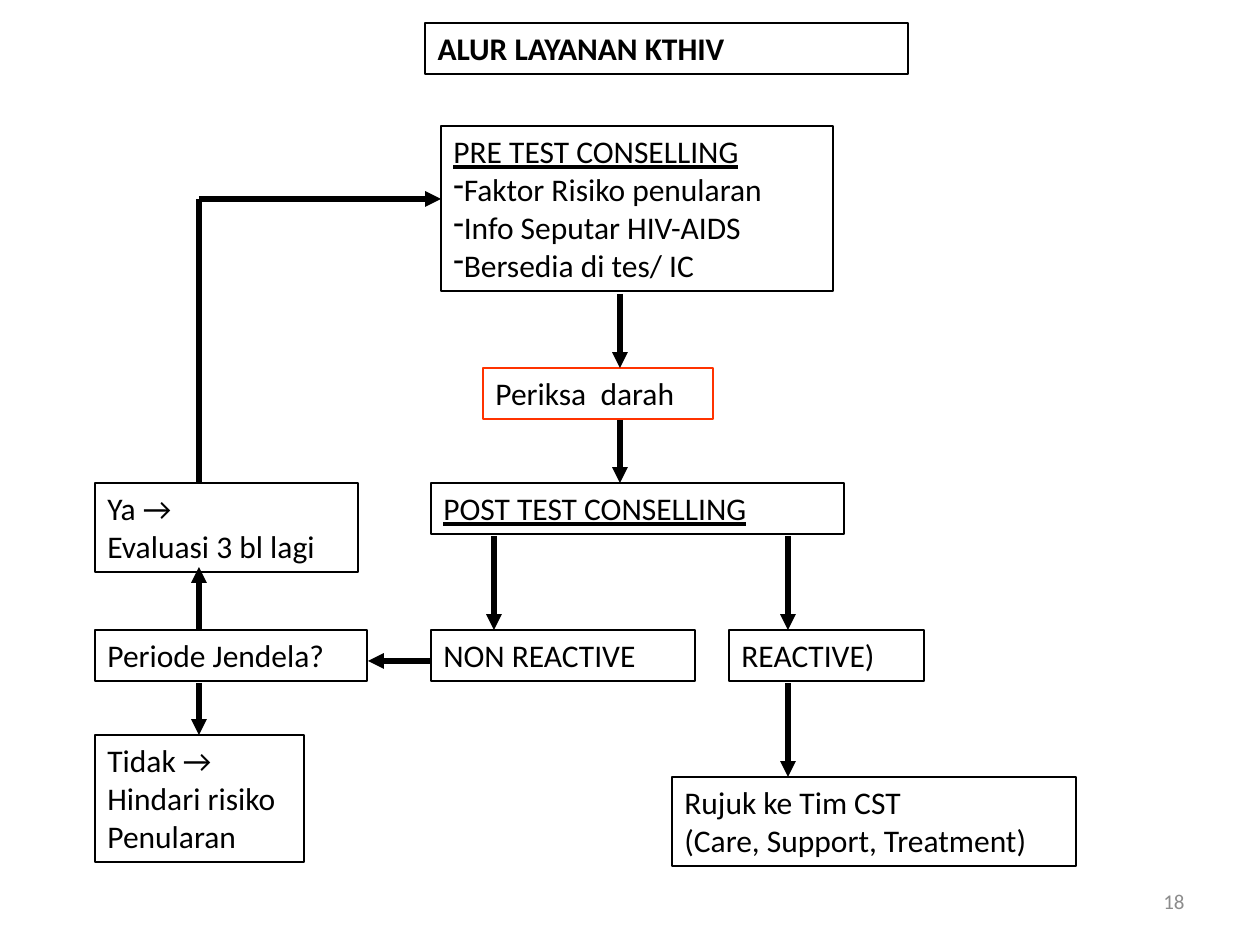
from lxml.etree import SubElement
from pptx import Presentation
from pptx.dml.color import RGBColor
from pptx.enum.shapes import MSO_CONNECTOR as Connector, MSO_SHAPE as Shape
from pptx.enum.text import MSO_ANCHOR as Anchor, MSO_AUTO_SIZE as AutoSize, PP_ALIGN as Align
from pptx.oxml.ns import qn
from pptx.util import Emu, Pt

PX = 914400 / 126
BLACK = "000000"
RED = "FF3300"
GREY = "8C8C8C"

LEFT_X, NON_REACTIVE_X, CENTRE_X, REACTIVE_X = 199, 494, 620, 788

STEPS = [
    ((441, 126, 392, 165), ["PRE TEST CONSELLING", "-Faktor Risiko penularan",
                            "-Info Seputar HIV-AIDS", "-Bersedia di tes/ IC"],
     {"underline": True}),
    ((483, 368, 230, 51), ["Periksa  darah"], {"outline": RED}),
    ((431, 483, 413, 51), ["POST TEST CONSELLING"], {"underline": True}),
    ((431, 630, 264, 51), ["NON REACTIVE"], {}),
    ((729, 630, 195, 51), ["REACTIVE)"], {}),
    ((672, 777, 404, 89), ["Rujuk ke Tim CST", "(Care, Support, Treatment)"], {}),
    ((95, 630, 272, 51), ["Periode Jendela?"], {}),
    ((95, 483, 263, 89), ["Ya →", "Evaluasi 3 bl lagi"], {}),
    ((95, 735, 209, 127), ["Tidak →", "Hindari risiko", "Penularan"], {}),
]

ARROWS = [
    (CENTRE_X, 294, CENTRE_X, 368),
    (CENTRE_X, 420, CENTRE_X, 483),
    (NON_REACTIVE_X, 536, NON_REACTIVE_X, 630),
    (REACTIVE_X, 536, REACTIVE_X, 630),
    (REACTIVE_X, 683, REACTIVE_X, 777),
    (431, 661, 368, 661),
    (LEFT_X, 683, LEFT_X, 735),
    (LEFT_X, 630, LEFT_X, 567),
    (LEFT_X, 199, 441, 199),
]


def px(length):
    return Emu(round(length * PX))


def colour(code):
    return RGBColor.from_string(code)


def place(box, area):
    box.left, box.top, box.width, box.height = map(px, area)


def add_dash(para):
    properties = para._p.get_or_add_pPr()
    properties.set("marL", "0")
    properties.set("indent", "0")
    SubElement(properties, qn("a:buFontTx"))
    SubElement(properties, qn("a:buChar"), char="-")


def write(box, lines, size=18, ink=BLACK, bold=False, underline=False,
          align=Align.LEFT, anchor=Anchor.TOP):
    frame = box.text_frame
    frame.word_wrap = True
    frame.auto_size = AutoSize.NONE
    frame.vertical_anchor = anchor
    for index, line in enumerate(lines):
        para = frame.add_paragraph() if index else frame.paragraphs[0]
        para.alignment = align
        if line.startswith("-"):
            add_dash(para)
        span = para.add_run()
        span.text = line.removeprefix("-")
        font = span.font
        font.name, font.size, font.bold = "Calibri", Pt(size), bold
        font.underline = underline and index == 0
        font.color.rgb = colour(ink)


def draw_outline(box, ink=BLACK):
    box.fill.background()
    box.line.color.rgb = colour(ink)
    box.line.width = Pt(0.75)


def add_title(page, area, text):
    box = page.shapes.title
    place(box, area)
    draw_outline(box)
    write(box, [text], bold=True)


def add_step(page, area, lines, outline=BLACK, **text_format):
    box = page.shapes.add_shape(Shape.RECTANGLE, *map(px, area))
    box.shadow.inherit = False
    draw_outline(box, outline)
    write(box, lines, **text_format)


def add_line(page, ends, arrow=True):
    line = page.shapes.add_connector(Connector.STRAIGHT, *map(px, ends))
    line.line.color.rgb = colour(BLACK)
    line.line.width = Pt(3)
    if arrow:
        SubElement(line.line._get_or_add_ln(), qn("a:tailEnd"), type="triangle")
    SubElement(line._element.spPr, qn("a:effectLst"))


def add_page_number(page, area, number):
    box = page.shapes.add_textbox(*map(px, area))
    write(box, [number], size=12, ink=GREY, align=Align.RIGHT, anchor=Anchor.MIDDLE)


def main():
    deck = Presentation()
    deck.slide_width, deck.slide_height = px(1260), px(945)
    page = deck.slides.add_slide(deck.slide_layouts[5])
    add_page_number(page, (903, 876, 294, 50), "18")
    add_title(page, (425, 23, 483, 51), "ALUR LAYANAN KTHIV")
    for area, lines, text_format in STEPS:
        add_step(page, area, lines, **text_format)
    for ends in ARROWS:
        add_line(page, ends)
    add_line(page, (LEFT_X, 483, LEFT_X, 199), arrow=False)
    deck.save("out.pptx")


if __name__ == "__main__":
    main()
